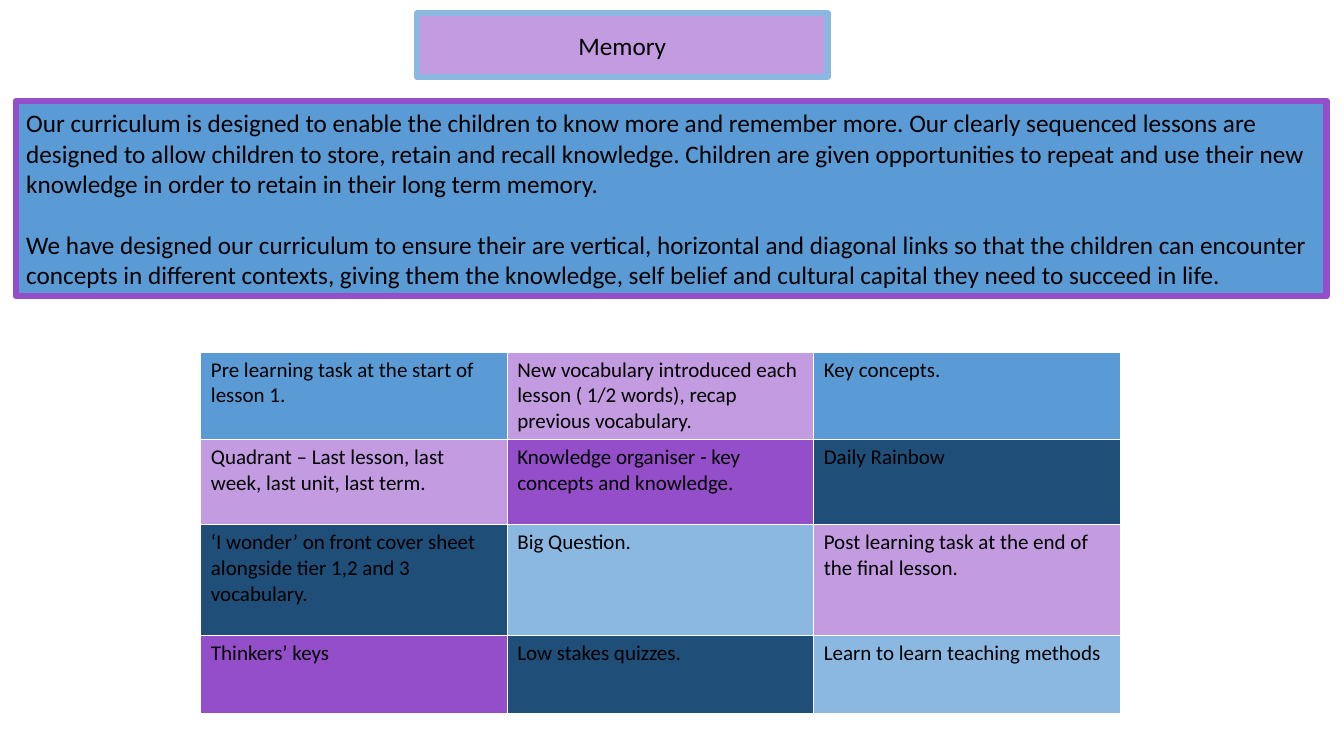
"""Build the Memory curriculum slide."""
from dataclasses import dataclass

import pptx
import pptx.dml.color
import pptx.enum.text
import pptx.oxml
import pptx.oxml.ns
import pptx.util

Pt = pptx.util.Pt
Align = pptx.enum.text.PP_ALIGN


@dataclass(frozen=True)
class Theme:
    font: str = "Calibri"
    ink: str = "000000"
    blue: str = "5B9BD5"
    sky: str = "8BB8E1"
    lilac: str = "C39BE1"
    purple: str = "954ECA"
    navy: str = "1F4E79"
    panel_size: float = 18
    strategy_size: float = 15
    border: float = 4.5


@dataclass(frozen=True)
class Panel:
    left: float
    top: float
    width: float
    height: float
    fill: str
    outline: str
    align: Align
    paragraphs: tuple[str, ...]


@dataclass(frozen=True)
class Strategy:
    text: str
    fill: str


THEME = Theme()

HEADING = Panel(298, 9.4, 293, 45.4, THEME.lilac, THEME.sky, Align.CENTER, ("Memory",))
INTENT = Panel(
    11.5, 72, 936, 139.7, THEME.blue, THEME.purple, Align.LEFT,
    (
        "Our curriculum is designed to enable the children to know more and remember more. "
        "Our clearly sequenced lessons are designed to allow children to store, retain and "
        "recall knowledge. Children are given opportunities to repeat and use their new "
        "knowledge in order to retain in their long term memory.",
        "We have designed our curriculum to ensure their are vertical, horizontal and diagonal "
        "links so that the children can encounter concepts in different contexts, giving them "
        "the knowledge, self belief and cultural capital they need to succeed in life.",
    ),
)
PARAGRAPH_GAP = 22

STRATEGIES = (
    (
        Strategy("Pre learning task at the start of lesson 1.", THEME.blue),
        Strategy("New vocabulary introduced each lesson ( 1/2 words), recap previous vocabulary.",
                 THEME.lilac),
        Strategy("Key concepts.", THEME.blue),
    ),
    (
        Strategy("Quadrant – Last lesson, last week, last unit, last term.", THEME.lilac),
        Strategy("Knowledge organiser - key concepts and knowledge.", THEME.purple),
        Strategy("Daily Rainbow", THEME.navy),
    ),
    (
        Strategy("‘I wonder’ on front cover sheet alongside tier 1,2 and 3 vocabulary.", THEME.navy),
        Strategy("Big Question.", THEME.sky),
        Strategy("Post learning task at the end of the final lesson.", THEME.lilac),
    ),
    (
        Strategy("Thinkers’ keys", THEME.purple),
        Strategy("Low stakes quizzes.", THEME.navy),
        Strategy("Learn to learn teaching methods", THEME.sky),
    ),
)
TABLE_LEFT, TABLE_TOP, COLUMN_WIDTH = 143.5, 251.5, 218.9
ROW_HEIGHTS = (61, 61, 79, 56)


def rgb(colour: str) -> pptx.dml.color.RGBColor:
    """Turn a hex string into a colour."""
    return pptx.dml.color.RGBColor.from_string(colour)


def paint(target, colour: str) -> None:
    """Give a shape, cell or line a solid fill."""
    target.fill.solid()
    target.fill.fore_color.rgb = rgb(colour)


def style_runs(paragraph, size: float) -> None:
    """Apply the theme's type to every run of a paragraph."""
    for run in paragraph.runs:
        run.font.name = THEME.font
        run.font.size = Pt(size)
        run.font.bold = False
        run.font.color.rgb = rgb(THEME.ink)


def remove_bullet(paragraph) -> None:
    """Drop the inherited bullet and hanging indent."""
    properties = paragraph._p.get_or_add_pPr()
    properties.set("marL", "0")
    properties.set("indent", "0")
    properties.append(pptx.oxml.parse_xml(f"<a:buNone {pptx.oxml.ns.nsdecls('a')}/>"))


def fill_panel(placeholder, panel: Panel) -> None:
    """Move a placeholder and fill it with a panel's text and colours."""
    placeholder.left, placeholder.top = Pt(panel.left), Pt(panel.top)
    placeholder.width, placeholder.height = Pt(panel.width), Pt(panel.height)
    paint(placeholder, panel.fill)
    paint(placeholder.line, panel.outline)
    placeholder.line.width = Pt(THEME.border)
    frame = placeholder.text_frame
    frame.text = "\n".join(panel.paragraphs)
    frame.word_wrap = True
    frame.auto_size = pptx.enum.text.MSO_AUTO_SIZE.NONE
    frame.vertical_anchor = pptx.enum.text.MSO_ANCHOR.MIDDLE
    for index, paragraph in enumerate(frame.paragraphs):
        paragraph.alignment = panel.align
        paragraph.space_before = Pt(PARAGRAPH_GAP if index else 0)
        remove_bullet(paragraph)
        style_runs(paragraph, THEME.panel_size)


def add_strategies(slide) -> None:
    """Add the table of memory strategies."""
    columns = len(STRATEGIES[0])
    table = slide.shapes.add_table(
        len(STRATEGIES), columns, Pt(TABLE_LEFT), Pt(TABLE_TOP),
        Pt(COLUMN_WIDTH * columns), Pt(sum(ROW_HEIGHTS)),
    ).table
    for column in table.columns:
        column.width = Pt(COLUMN_WIDTH)
    for row, height, strategies in zip(table.rows, ROW_HEIGHTS, STRATEGIES):
        row.height = Pt(height)
        for cell, strategy in zip(row.cells, strategies):
            cell.text_frame.text = strategy.text
            paint(cell, strategy.fill)
            style_runs(cell.text_frame.paragraphs[0], THEME.strategy_size)


def main() -> None:
    """Build and save the slide."""
    presentation = pptx.Presentation()
    presentation.slide_width, presentation.slide_height = Pt(960), Pt(540)
    slide = presentation.slides.add_slide(presentation.slide_layouts[1])
    fill_panel(slide.shapes.title, HEADING)
    fill_panel(slide.placeholders[1], INTENT)
    add_strategies(slide)
    presentation.save("out.pptx")


if __name__ == "__main__":
    main()
